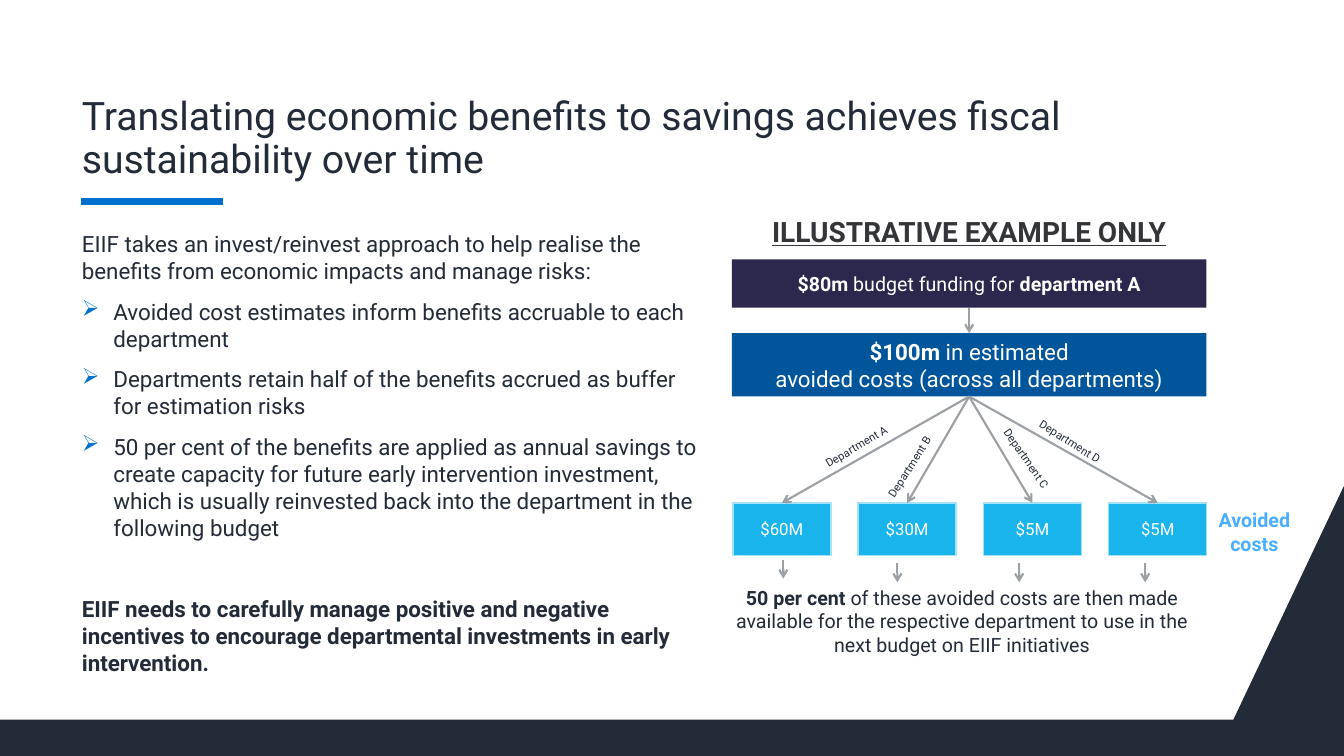
from lxml import etree
from pptx import Presentation
from pptx.dml.color import RGBColor
from pptx.enum.shapes import MSO_CONNECTOR as Link, MSO_SHAPE as Kind
from pptx.enum.text import MSO_ANCHOR as Anchor, PP_ALIGN as Align
from pptx.oxml.ns import qn
from pptx.util import Pt

NAVY = RGBColor(0x23, 0x2B, 0x39)
BLUE = RGBColor(0x00, 0x72, 0xCE)
PLUM = RGBColor(0x2B, 0x27, 0x4D)
DEEP = RGBColor(0x00, 0x55, 0x9B)
CYAN = RGBColor(0x18, 0xB4, 0xEB)
PALE = RGBColor(0xA4, 0xE2, 0xF7)
SKY = RGBColor(0x49, 0xAE, 0xFF)
GREY = RGBColor(0x9B, 0xA0, 0xA4)
DARK = RGBColor(0x33, 0x35, 0x38)
WHITE = RGBColor(0xFF, 0xFF, 0xFF)

FONT = "Roboto"
BULLET = "➢ "
LEFT, WIDE = 522.75, 339  # the wide bars of the diagram
ROW, STEP = 359.25, 89.5  # top and pitch of the cost boxes

BODY = [
    "EIIF takes an invest/reinvest approach to help realise the benefits "
    "from economic impacts and manage risks:",
    BULLET + "Avoided cost estimates inform benefits accruable to each department",
    BULLET + "Departments retain half of the benefits accrued as buffer "
    "for estimation risks",
    BULLET + "50 per cent of the benefits are applied as annual savings to create "
    "capacity for future early intervention investment, which is usually "
    "reinvested back into the department in the following budget",
    "**EIIF needs to carefully manage positive and negative incentives to "
    "encourage departmental investments in early intervention.**",
]
COSTS = ["$60M", "$30M", "$5M", "$5M"]
DROPS = [(559.5, 399.75), (641, 402.5), (728, 402.5), (818, 402.5)]
# text, left, top, turn
LABELS = [
    ("Department A", 579, 307.5, 329.6),
    ("Department B", 615, 319.75, 302.5),
    ("Department C", 698.5, 324, 55.4),
    ("Department D", 731.5, 310.25, 32.3),
]


def add_mark(para):
    """Give a paragraph a hanging arrow bullet."""
    props = para._p.get_or_add_pPr()
    props.set("marL", str(Pt(22.5)))
    props.set("indent", str(-Pt(22.5)))
    tint = etree.SubElement(props, qn("a:buClr"))
    etree.SubElement(tint, qn("a:srgbClr"), val=str(BLUE))
    etree.SubElement(props, qn("a:buChar"), char=BULLET.strip())


def write(frame, lines, size, color, align=Align.LEFT):
    """Fill a frame; words between double stars are bold."""
    frame.word_wrap = True
    for i, line in enumerate(lines):
        para = frame.paragraphs[0] if i == 0 else frame.add_paragraph()
        if line.startswith(BULLET):
            add_mark(para)
            line = line[len(BULLET):]
        para.alignment = align
        for j, part in enumerate(line.split("**")):
            if not part:
                continue
            run = para.add_run()
            run.text = part
            run.font.name = FONT
            run.font.size = Pt(size)
            run.font.color.rgb = color
            run.font.bold = j % 2 == 1


def add_text(slide, place, lines, size, color=NAVY, align=Align.LEFT, inset=7.2):
    box = slide.shapes.add_textbox(*map(Pt, place))
    frame = box.text_frame
    frame.margin_left = frame.margin_right = Pt(inset)
    write(frame, lines, size, color, align)
    return box


def add_box(slide, place, lines, size, fill, edge=None):
    box = slide.shapes.add_shape(Kind.RECTANGLE, *map(Pt, place))
    box.shadow.inherit = False
    box.fill.solid()
    box.fill.fore_color.rgb = fill
    if edge:
        box.line.color.rgb = edge
        box.line.width = Pt(1)
    else:
        box.line.fill.background()
    box.text_frame.vertical_anchor = Anchor.MIDDLE
    write(box.text_frame, lines, size, WHITE, Align.CENTER)
    return box


def add_line(slide, ends, color, width):
    line = slide.shapes.add_connector(Link.STRAIGHT, *map(Pt, ends))
    line.line.color.rgb = color
    line.line.width = Pt(width)
    etree.SubElement(line._element.spPr, qn("a:effectLst"))
    return line


def add_arrow(slide, ends):
    arrow = add_line(slide, ends, GREY, 1.5)
    etree.SubElement(arrow.line._get_or_add_ln(), qn("a:tailEnd"), type="arrow")
    return arrow


def join(slide, start, end):
    """Arrow from the bottom of one box to the top of another."""
    arrow = add_arrow(slide, (0, 0, 0, 0))
    arrow.begin_connect(start, 2)
    arrow.end_connect(end, 0)


def add_base(slide):
    """Dark footer that rises at the right."""
    pen = slide.shapes.build_freeform(881, 514, scale=Pt(1))
    pen.add_line_segments([(0, 514), (0, 540), (960, 540), (960, 347)])
    base = pen.convert_to_shape()
    base.shadow.inherit = False
    base.fill.solid()
    base.fill.fore_color.rgb = NAVY
    base.line.fill.background()


def add_chart(slide):
    """Flow from funding to the costs of each department."""
    fund = add_box(slide, (LEFT, 185.25, WIDE, 34.5),
                   ["**$80m** budget funding for **department A**"], 14, PLUM)
    total = add_box(slide, (LEFT, 238, WIDE, 45.25),
                    ["**$100m** in estimated",
                     "avoided costs (across all departments)"], 16, DEEP)
    join(slide, fund, total)
    for i, cost in enumerate(COSTS):
        box = add_box(slide, (523.5 + STEP * i, ROW, 70, 37.5),
                      [cost], 12, CYAN, PALE)
        join(slide, total, box)
    for x, y in DROPS:
        add_arrow(slide, (x, y, x, y + 13.5))
    for name, x, y, turn in LABELS:
        add_text(slide, (x, y, 76, 17), [name], 8).rotation = turn


def main():
    deck = Presentation()
    deck.slide_width, deck.slide_height = Pt(960), Pt(540)
    slide = deck.slides.add_slide(deck.slide_layouts[6])

    # Frame and title
    add_base(slide)
    add_line(slide, (57.75, 144, 159.25, 144), BLUE, 4.5)
    title = add_text(slide, (55.5, 52, 828, 81.25),
                     ["Translating economic benefits to savings achieves "
                      "fiscal sustainability over time"], 28, inset=3)
    title.text_frame.vertical_anchor = Anchor.BOTTOM
    title.text_frame.paragraphs[0].line_spacing = 0.9

    # Left text
    body = add_text(slide, (55.5, 160.75, 452, 315), BODY, 16, inset=3)
    paras = body.text_frame.paragraphs
    for para in paras[1:-1]:
        para.space_before = Pt(10)
    paras[-1].space_before = Pt(38.75)

    # Right diagram
    head = add_text(slide, (LEFT, 149.75, WIDE, 31.5),
                    ["**ILLUSTRATIVE EXAMPLE ONLY**"], 20, DARK, Align.CENTER)
    head.text_frame.paragraphs[0].runs[0].font.underline = True
    add_chart(slide)
    add_text(slide, (851, ROW, 90, 41), ["**Avoided costs**"], 14, SKY, Align.CENTER)
    add_text(slide, (512.75, 414.75, 349, 58),
             ["**50 per cent** of these avoided costs are then made available for "
              "the respective department to use in the next budget on EIIF "
              "initiatives"], 14, align=Align.CENTER)

    deck.save("out.pptx")


if __name__ == "__main__":
    main()
